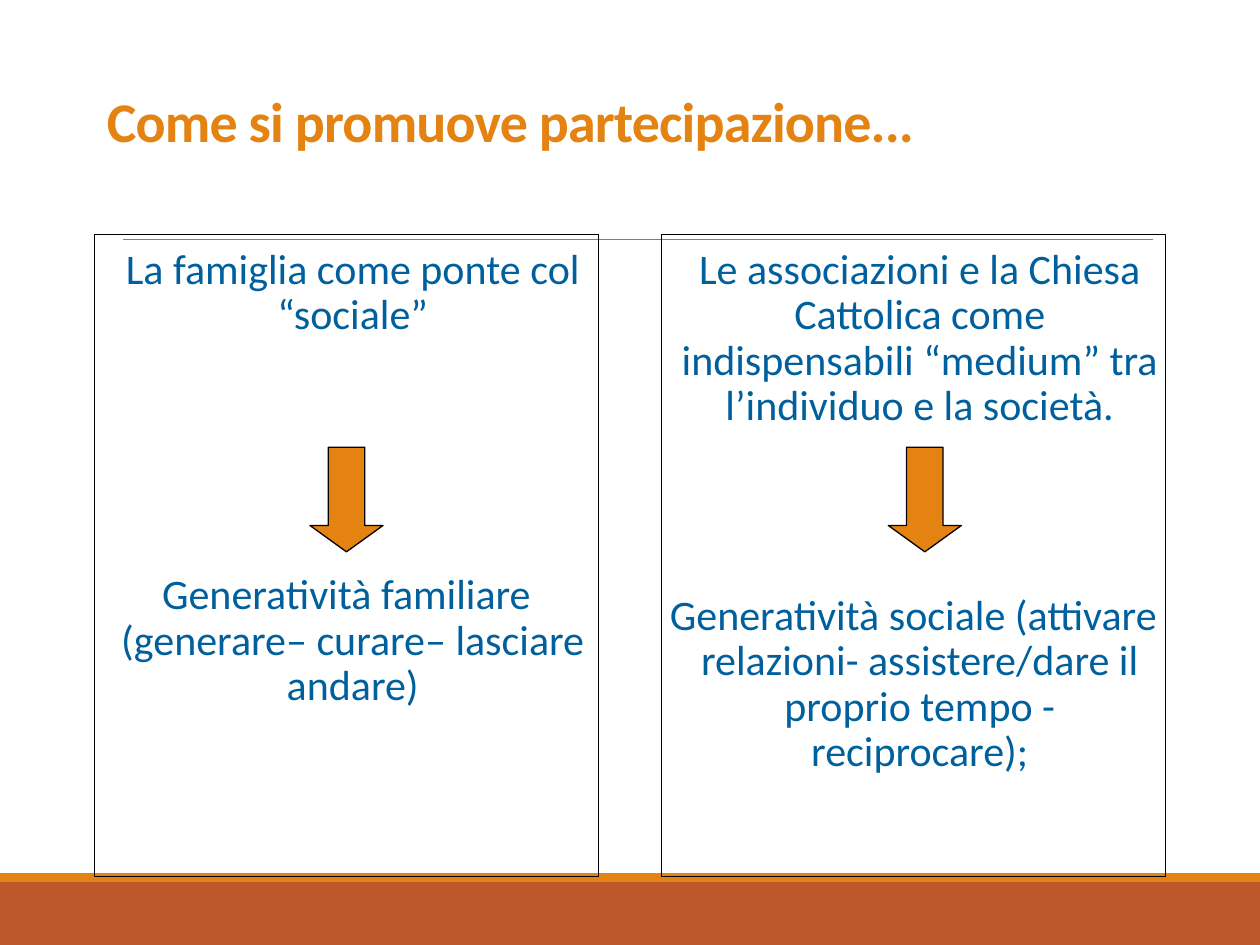
from lxml import etree
from pptx import Presentation
from pptx.dml.color import RGBColor
from pptx.enum import shapes, text
from pptx.oxml.ns import qn
from pptx.util import Inches, Pt

ORANGE, RUST, BLUE, BLACK, GREY = "E48312", "BD582C", "00609D", "000000", "808080"


def rgb(value):
    return RGBColor.from_string(value)


def add_box(s, kind, x, y, w, h, fill=None, line=None):
    sp = s.shapes.add_shape(kind, Inches(x), Inches(y), Inches(w), Inches(h))
    sp.shadow.inherit = False
    if fill:
        sp.fill.solid()
        sp.fill.fore_color.rgb = rgb(fill)
    else:
        sp.fill.background()
    if line:
        sp.line.color.rgb = rgb(line)
        sp.line.width = Pt(0.75)
    else:
        sp.line.fill.background()
    return sp


def set_font(p, size, color, bold=False):
    p.font.name = "Calibri"
    p.font.size = Pt(size)
    p.font.bold = bold
    p.font.color.rgb = rgb(color)


def add_background(s):
    # Footer bands and the rule under the title
    rect = shapes.MSO_SHAPE.RECTANGLE
    add_box(s, rect, 0, 7, 10, 0.5, RUST)
    add_box(s, rect, 0, 6.93, 10, 0.07, ORANGE)
    rule = s.shapes.add_connector(shapes.MSO_CONNECTOR.STRAIGHT,
                                  Inches(0.98), Inches(1.9), Inches(9.15), Inches(1.9))
    rule.line.color.rgb = rgb(GREY)
    rule.line.width = Pt(0.5)
    etree.SubElement(rule._element.spPr, qn("a:effectLst"))


def add_title(s, x, y, w, h, title):
    tf = s.shapes.add_textbox(Inches(x), Inches(y), Inches(w), Inches(h)).text_frame
    tf.word_wrap = True
    tf.vertical_anchor = text.MSO_ANCHOR.BOTTOM
    p = tf.paragraphs[0]
    p.line_spacing = 0.85
    r = p.add_run()
    r.text = title
    set_font(p, 32, ORANGE, bold=True)
    r._r.get_or_add_rPr().set("spc", "-50")


def add_column(s, x, y, w, h, premise, outcome, gap):
    """Framed column: premise, then the outcome after a gap in points."""
    tf = add_box(s, shapes.MSO_SHAPE.RECTANGLE, x, y, w, h, line=BLACK).text_frame
    tf.word_wrap = True
    tf.vertical_anchor = text.MSO_ANCHOR.TOP
    tf.margin_left = tf.margin_right = 0
    tf.margin_top, tf.margin_bottom = Inches(0.11), Inches(0.05)
    tf.text = f"{premise}\n{outcome}"
    for p, before, indent in zip(tf.paragraphs, (0, gap), (0, -0.1)):
        p.alignment = text.PP_ALIGN.CENTER
        p.line_spacing = 0.9
        p.space_before, p.space_after = Pt(before), Pt(2)
        pPr = p._p.get_or_add_pPr()
        pPr.set("marL", str(Inches(0.1)))
        pPr.set("indent", str(Inches(indent)))
        set_font(p, 24, BLUE)


def add_arrow(s, x, y, w, h):
    arrow = add_box(s, shapes.MSO_SHAPE.DOWN_ARROW, x, y, w, h, ORANGE, BLACK)
    arrow.adjustments[0] = 0.5
    arrow.adjustments[1] = 0.36


def main():
    prs = Presentation()
    prs.slide_width, prs.slide_height = Inches(10), Inches(7.5)
    s = prs.slides.add_slide(prs.slide_layouts[6])

    add_background(s)
    add_title(s, 0.75, 0.02, 8.5, 1.25, "Come si promuove partecipazione...")

    # Two columns, each with an arrow from premise to outcome
    columns = [
        (0.75, 2.46, 132, "La famiglia come ponte col “sociale”",
         "Generatività familiare (generare– curare– lasciare andare)"),
        (5.25, 7.05, 92, "Le associazioni e la Chiesa Cattolica come "
         "indispensabili “medium” tra l’individuo e la società.",
         "Generatività sociale (attivare relazioni- assistere/dare il "
         "proprio tempo - reciprocare);"),
    ]
    for x, arrow_x, gap, premise, outcome in columns:
        add_column(s, x, 1.86, 4, 5.1, premise, outcome, gap)
        add_arrow(s, arrow_x, 3.55, 0.58, 0.83)

    prs.save("out.pptx")


if __name__ == "__main__":
    main()
